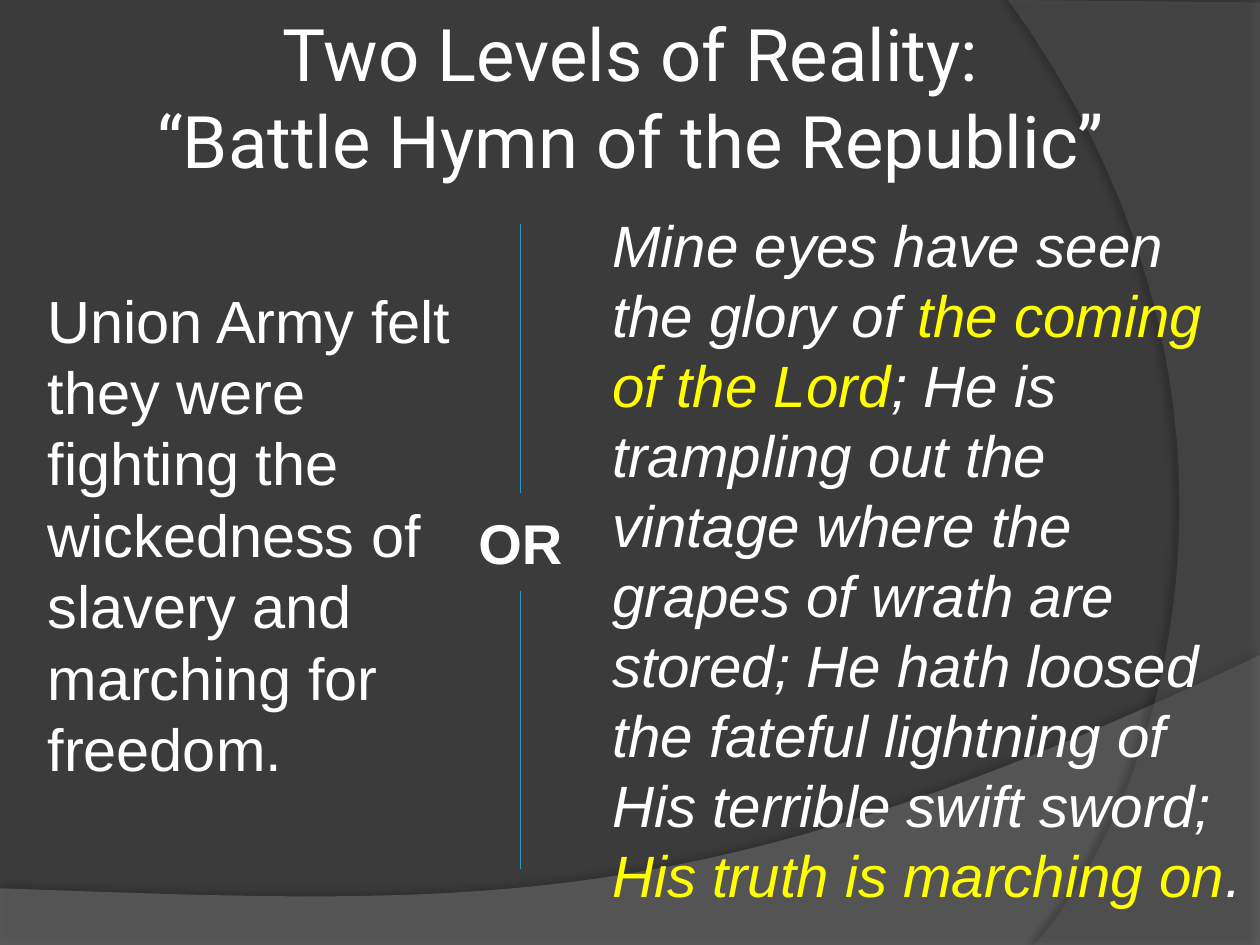
import pptx
import pptx.util
import pptx.dml.color
import pptx.enum.text
import pptx.enum.shapes
import pptx.oxml.ns
from lxml import etree
from pptx.util import Inches, Pt

THEME = {
    "background": "3B3B3B", "wave": "7F7F7F", "arc": "5E5E5E",
    "shadow": "000000", "divider": "239BC2",
    "text": "FFFFFF", "highlight": "FFFF00",
    "title_font": "Roboto", "body_font": "Arial",
    "title_size": 41.4, "reason_size": 34, "or_size": 32, "hymn_size": 33.3,
}
LEFT, CENTER = pptx.enum.text.PP_ALIGN.LEFT, pptx.enum.text.PP_ALIGN.CENTER

# Each run is its wording and its theme colour.
TITLE = [("Two Levels of Reality:\v“Battle Hymn of the Republic”", "text")]
REASON = [("Union Army felt they were fighting the wickedness of slavery "
           "and marching for freedom.", "text")]
HYMN = [
    ("Mine eyes have seen the glory of ", "text"),
    ("the coming of the Lord", "highlight"),
    ("; He is trampling out the vintage where the grapes of wrath are stored; "
     "He hath loosed the fateful lightning of His terrible swift sword; ", "text"),
    ("His truth is marching on", "highlight"),
    (".", "text"),
]

DIVIDER_X = 4.13
DIVIDER_SPANS = [(1.78, 3.91), (4.69, 6.9)]
OR_WIDTH = 1.1

# Straight corners, then one Bezier curve: start, two controls, end.
BACKDROPS = [
    {"corners": [(0, 7.05), (0, 7.51), (10, 7.51)],
     "curve": [(10, 5.2), (5.59, 7.29), (3.91, 7.19), (0, 7.05)],
     "color": "wave", "opacity": 45,
     "shadow": {"opacity": 35, "blur": 4, "distance": 3.5, "direction": 270}},
    {"corners": [(10, 0.02), (10, 7.5)],
     "curve": [(8.21, 7.5), (9.35, 6.19), (10.18, 3), (8, 0)],
     "color": "arc", "opacity": 40,
     "shadow": {"opacity": 45, "blur": 4, "distance": 4, "direction": 180}},
]


def theme_color(name):
    return pptx.dml.color.RGBColor.from_string(THEME[name])


def add_element(parent, tag, **attributes):
    element = etree.SubElement(parent, pptx.oxml.ns.qn(tag))
    for name, value in attributes.items():
        element.set(name, str(value))
    return element


def bend_last_segment(shape, controls):
    """Turn the last straight segment of a freeform into a Bezier curve."""
    segment = shape.element.spPr.findall(".//" + pptx.oxml.ns.qn("a:lnTo"))[-1]
    segment.tag = pptx.oxml.ns.qn("a:cubicBezTo")
    end_point = segment[0]
    for x, y in controls:
        add_element(segment, "a:pt", x=Inches(x) - shape.left, y=Inches(y) - shape.top)
    segment.append(end_point)


def add_backdrop(slide, backdrop):
    start, *controls, end = backdrop["curve"]
    points = [(Inches(x), Inches(y)) for x, y in backdrop["corners"] + [start, end]]
    builder = slide.shapes.build_freeform(*points[0])
    builder.add_line_segments(points[1:], close=True)
    shape = builder.convert_to_shape()
    bend_last_segment(shape, controls)
    shape.line.fill.background()
    shape.fill.solid()
    shape.fill.fore_color.rgb = theme_color(backdrop["color"])
    properties = shape.element.spPr
    fill_color = properties.find(".//" + pptx.oxml.ns.qn("a:srgbClr"))
    add_element(fill_color, "a:alpha", val=backdrop["opacity"] * 1000)

    shadow = backdrop["shadow"]
    outer = add_element(
        add_element(properties, "a:effectLst"), "a:outerShdw",
        blurRad=Pt(shadow["blur"]), dist=Pt(shadow["distance"]),
        dir=shadow["direction"] * 60000, algn="ctr", rotWithShape=0)
    shadow_color = add_element(outer, "a:srgbClr", val=THEME["shadow"])
    add_element(shadow_color, "a:alpha", val=shadow["opacity"] * 1000)


def add_text(slide, box, runs, size, font="body_font", align=LEFT,
             bold=False, italic=False, inset=None):
    text_frame = slide.shapes.add_textbox(*map(Inches, box)).text_frame
    text_frame.word_wrap = True
    text_frame.vertical_anchor = pptx.enum.text.MSO_ANCHOR.MIDDLE
    if inset is not None:
        text_frame.margin_left = text_frame.margin_right = Inches(inset)
        text_frame.margin_top = text_frame.margin_bottom = Inches(inset)
    paragraph = text_frame.paragraphs[0]
    paragraph.alignment = align
    if len(runs) == 1:
        paragraph.text = runs[0][0]
    else:
        for wording, _ in runs:
            paragraph.add_run().text = wording
    for index, run in enumerate(paragraph.runs):
        run.font.name = THEME[font]
        run.font.size = Pt(THEME[size])
        run.font.bold = bold
        run.font.italic = italic
        run.font.color.rgb = theme_color(runs[min(index, len(runs) - 1)][1])


def add_divider(slide, top, bottom):
    connector = slide.shapes.add_connector(
        pptx.enum.shapes.MSO_CONNECTOR.STRAIGHT,
        Inches(DIVIDER_X), Inches(top), Inches(DIVIDER_X), Inches(bottom))
    connector.line.color.rgb = theme_color("divider")
    connector.line.width = Pt(0.75)
    add_element(connector.element.spPr, "a:effectLst")


def main():
    presentation = pptx.Presentation()
    presentation.slide_width, presentation.slide_height = Inches(10), Inches(7.5)
    slide = presentation.slides.add_slide(presentation.slide_layouts[6])
    slide.background.fill.solid()
    slide.background.fill.fore_color.rgb = theme_color("background")

    for backdrop in BACKDROPS:
        add_backdrop(slide, backdrop)
    add_text(slide, (0.2, 0.14, 9.61, 1.25), TITLE, "title_size",
             font="title_font", align=CENTER, inset=0.05)
    add_text(slide, (0.28, 1.62, 3.54, 5.23), REASON, "reason_size")
    for top, bottom in DIVIDER_SPANS:
        add_divider(slide, top, bottom)
    add_text(slide, (DIVIDER_X - OR_WIDTH / 2, 3.98, OR_WIDTH, 0.64),
             [("OR", "text")], "or_size", align=CENTER, bold=True)
    add_text(slide, (4.76, 1.59, 5.24, 5.7), HYMN, "hymn_size", italic=True)
    presentation.save("out.pptx")


if __name__ == "__main__":
    main()
